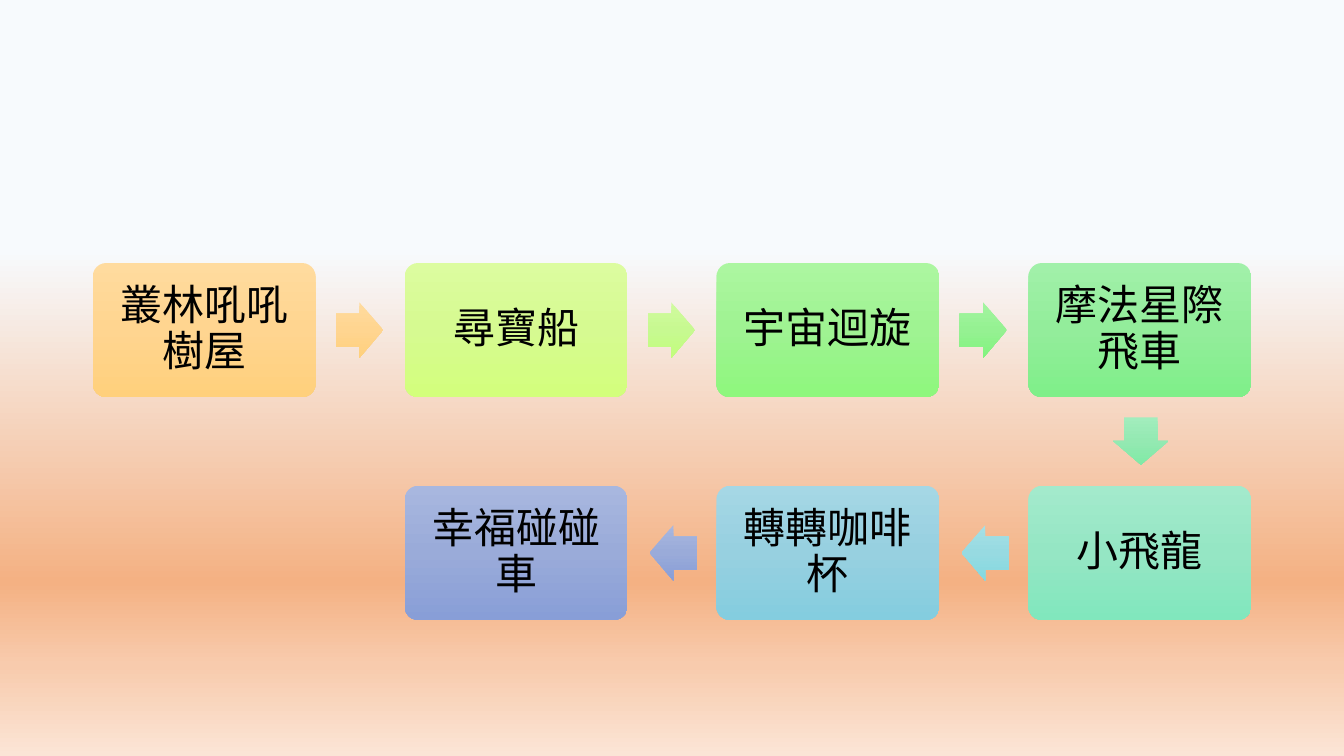
from lxml import etree
from pptx import Presentation
from pptx.dml.color import RGBColor
from pptx.enum.shapes import MSO_SHAPE as Preset
from pptx.enum.text import MSO_ANCHOR as Anchor, PP_ALIGN as Align
from pptx.oxml.ns import qn
from pptx.util import Inches, Pt

# Gradient colours, from top to bottom
COLORS = {
    "sky": ["F7FAFD", "F4B183", "F8CBAD", "FBE5D6"],
    "orange": ["FFDB9E", "FFD590", "FFD07C"],
    "lime": ["DCFC9F", "D6FA91", "D3FF7C"],
    "yellow green": ["D0FB9F", "C7F991", "C2FE7C"],
    "green": ["ACF6A0", "9FF392", "8EF77D"],
    "bright green": ["A3F4A0", "95F192", "81F47E"],
    "leaf": ["A1F0A9", "93ED9B", "7FEF89"],
    "mint": ["A2EDBD", "94E9B2", "80EAA6"],
    "jade": ["A3EACC", "95E6C4", "81E7BD"],
    "aqua": ["A5E0E6", "97DAE1", "83D9E0"],
    "sky blue": ["A5D7E5", "97D0E0", "84CDDF"],
    "violet": ["A8B7DF", "9AABD9", "889ED7"],
    "text": "000000",
}
BOX_WIDTH, BOX_HEIGHT = 2.21, 1.33
ARROW_WIDTH, ARROW_HEIGHT = 0.47, 0.55
COLUMNS = [0.92 + column * 9.28 / 3 for column in range(4)]
ROWS = [2.61, 4.82]


def paint_gradient(fill, element, name, positions=(0, 50, 100)):
    fill.gradient()
    fill.gradient_angle = 270
    gradient = next(element.iter(qn("a:gradFill")))
    gradient.set("rotWithShape", "0")
    stops = gradient.find(qn("a:gsLst"))
    for stop in list(stops):
        stops.remove(stop)
    for position, color in zip(positions, COLORS[name]):
        stop = etree.SubElement(stops, qn("a:gs"), pos=str(position * 1000))
        etree.SubElement(stop, qn("a:srgbClr"), val=color)


def add_part(preset, left, top, width, height, name, adjustments):
    part = page.shapes.add_shape(preset, Inches(left), Inches(top), Inches(width), Inches(height))
    for index, value in enumerate(adjustments):
        part.adjustments[index] = value
    part.shadow.inherit = False
    part.line.fill.background()
    paint_gradient(part.fill, part.element, name)
    return part


# Page and background
deck = Presentation()
deck.slide_width, deck.slide_height = Inches(13.33), Inches(7.5)
page = deck.slides.add_slide(deck.slide_layouts[6])
paint_gradient(page.background.fill, page.element, "sky", (33, 77, 88, 100))

# Ride boxes: text, column, row, colour
rides = [
    ("叢林吼吼樹屋", 0, 0, "orange"),
    ("尋寶船", 1, 0, "lime"),
    ("宇宙迴旋", 2, 0, "green"),
    ("摩法星際飛車", 3, 0, "leaf"),
    ("小飛龍", 3, 1, "jade"),
    ("轉轉咖啡杯", 2, 1, "sky blue"),
    ("幸福碰碰車", 1, 1, "violet"),
]
frame_format = {"word_wrap": True, "vertical_anchor": Anchor.MIDDLE}
for side in ("left", "right", "top", "bottom"):
    frame_format["margin_" + side] = Inches(0.12)
for name, column, row, color in rides:
    box = add_part(Preset.ROUNDED_RECTANGLE, COLUMNS[column], ROWS[row],
                   BOX_WIDTH, BOX_HEIGHT, color, [0.1])
    for key, value in frame_format.items():
        setattr(box.text_frame, key, value)
    para = box.text_frame.paragraphs[0]
    para.alignment, para.line_spacing = Align.CENTER, 0.9
    span = para.add_run()
    span.text = name
    span.font.name, span.font.size = "Calibri", Pt(30)
    span.font.color.rgb = RGBColor.from_string(COLORS["text"])

# Arrows between the rides: left, top, rotation, colour
arrows = [
    (COLUMNS[0] + 2.41, ROWS[0] + 0.39, 0, "orange"),
    (COLUMNS[1] + 2.41, ROWS[0] + 0.39, 0, "yellow green"),
    (COLUMNS[2] + 2.41, ROWS[0] + 0.39, 0, "bright green"),
    (COLUMNS[3] + 0.88, 4.1, 90, "mint"),
    (COLUMNS[2] + 2.43, ROWS[1] + 0.39, 180, "aqua"),
    (COLUMNS[1] + 2.43, ROWS[1] + 0.39, 180, "violet"),
]
for left, top, rotation, color in arrows:
    arrow = add_part(Preset.RIGHT_ARROW, left, top, ARROW_WIDTH, ARROW_HEIGHT, color, [0.6, 0.5])
    arrow.rotation = rotation

deck.save("out.pptx")
